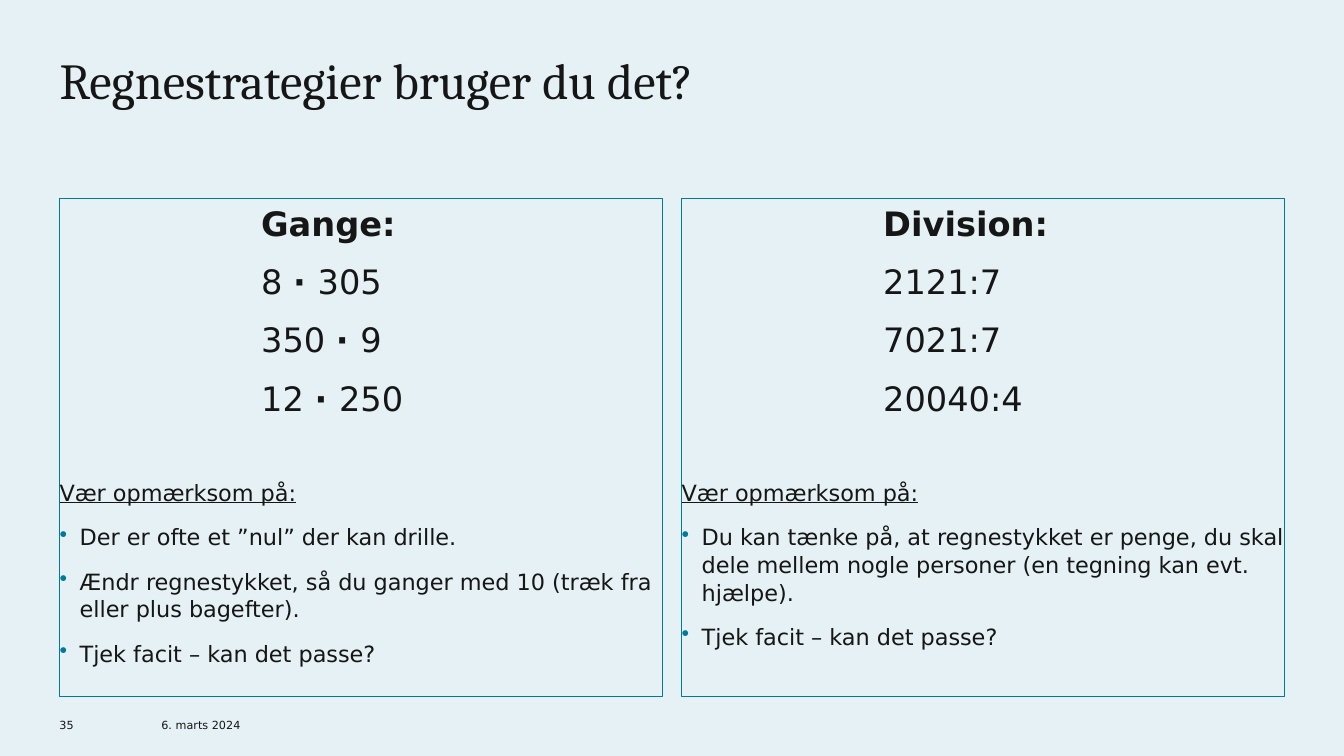
from dataclasses import dataclass

from lxml import etree
from pptx import Presentation
from pptx.dml.color import RGBColor as RGB
from pptx.enum.shapes import MSO_SHAPE as SHAPE
from pptx.enum.text import MSO_ANCHOR as ANCHOR, PP_ALIGN as ALIGN
from pptx.oxml.ns import qn
from pptx.util import Inches, Pt


@dataclass(frozen=True)
class Theme:
    background: RGB = RGB.from_string("E5F1F4")
    ink: RGB = RGB.from_string("161616")
    accent: RGB = RGB.from_string("007A98")
    heading_font: str = "Cambria"
    body_font: str = "DejaVu Sans"
    title: int = 36
    task: int = 24
    note: int = 16
    footer: int = 8


WIDTH, HEIGHT = 13.33, 7.5
MARGIN, GUTTER = 0.59, 0.19
COLUMN = (WIDTH - 2 * MARGIN - GUTTER) / 2
TASK_INDENT, BULLET_INDENT = 2, 0.2
LINE_SPACING = 1.03
PARAGRAPH_GAP, SECTION_GAP = 12, 43


def column_left(index):
    return MARGIN + index * (COLUMN + GUTTER)


class SlideBuilder:
    def __init__(self, prs, theme):
        self.theme = theme
        self.slide = prs.slides.add_slide(prs.slide_layouts[6])
        fill = self.slide.background.fill
        fill.solid()
        fill.fore_color.rgb = theme.background

    def paragraph(self, tf, text, size, font=None, bold=False, underline=False,
                  before=0, spacing=None, indent=0, bullet=False):
        """Add a paragraph; parts between asterisks switch the bold setting."""
        first = not tf.paragraphs[0].runs
        p = tf.paragraphs[0] if first else tf.add_paragraph()
        p.alignment = ALIGN.LEFT
        p.space_before = Pt(0 if first else before)
        if spacing:
            p.line_spacing = spacing
        pPr = p._p.get_or_add_pPr()
        pPr.set("marL", str(Inches(indent)))
        pPr.set("indent", str(-Inches(indent) if bullet else 0))
        if bullet:
            color = etree.SubElement(pPr, qn("a:buClr"))
            etree.SubElement(color, qn("a:srgbClr"), val=str(self.theme.accent))
            etree.SubElement(pPr, qn("a:buChar"), char="•")
        for i, part in enumerate(text.split("*")):
            r = p.add_run()
            r.text = part
            r.font.name = font or self.theme.body_font
            r.font.size = Pt(size)
            r.font.bold = bold != (i % 2 == 1)
            r.font.underline = underline
            r.font.color.rgb = self.theme.ink

    def frame(self, sp, anchor=ANCHOR.TOP):
        tf = sp.text_frame
        tf.word_wrap = True
        tf.vertical_anchor = anchor
        tf.margin_left = tf.margin_right = tf.margin_top = tf.margin_bottom = 0
        return tf

    def text(self, text, left, top, width, height, size, anchor=ANCHOR.TOP, **style):
        sp = self.slide.shapes.add_textbox(*map(Inches, (left, top, width, height)))
        self.paragraph(self.frame(sp, anchor), text, size, **style)

    def panel(self, index, heading, tasks, notes):
        """Add an outlined column with a heading, tasks and bulleted notes."""
        sp = self.slide.shapes.add_shape(
            SHAPE.RECTANGLE, *map(Inches, (column_left(index), 1.97, COLUMN, 4.94)))
        sp.shadow.inherit = False
        sp.fill.background()
        sp.line.color.rgb = self.theme.accent
        sp.line.width = Pt(0.75)
        tf = self.frame(sp)
        tf.margin_top = Inches(0.03)
        gaps = dict(before=PARAGRAPH_GAP, spacing=LINE_SPACING)
        for i, line in enumerate([heading, *tasks]):
            self.paragraph(tf, line, self.theme.task, bold=i == 0,
                           indent=TASK_INDENT, **gaps)
        self.paragraph(tf, "Vær opmærksom på:", self.theme.note, underline=True,
                       before=SECTION_GAP, spacing=LINE_SPACING)
        for note in notes:
            self.paragraph(tf, note, self.theme.note, bullet=True,
                           indent=BULLET_INDENT, **gaps)


def main():
    prs = Presentation()
    prs.slide_width, prs.slide_height = Inches(WIDTH), Inches(HEIGHT)
    theme = Theme()
    s = SlideBuilder(prs, theme)

    s.text("Regnestrategier bruger du det?", MARGIN, 0.59, 10.12, 1.02,
           theme.title, font=theme.heading_font, spacing=0.83)
    s.panel(0, "Gange:", ["8 *∙ *305", "350 *∙ *9", "12 *∙ *250"], [
        "Der er ofte et ”nul” der kan drille.",
        "Ændr regnestykket, så du ganger med 10 (træk fra eller plus bagefter).",
        "Tjek facit – kan det passe?",
    ])
    s.panel(1, "Division:", ["2121:7", "7021:7", "20040:4"], [
        "Du kan tænke på, at regnestykket er penge, du skal dele mellem nogle "
        "personer (en tegning kan evt. hjælpe).",
        "Tjek facit – kan det passe?",
    ])
    for text, left, width in [("35", MARGIN, 0.3), ("6. marts 2024", 1.6, 1.39)]:
        s.text(text, left, 7.06, width, 0.2, theme.footer, anchor=ANCHOR.BOTTOM)

    prs.save("out.pptx")


if __name__ == "__main__":
    main()
